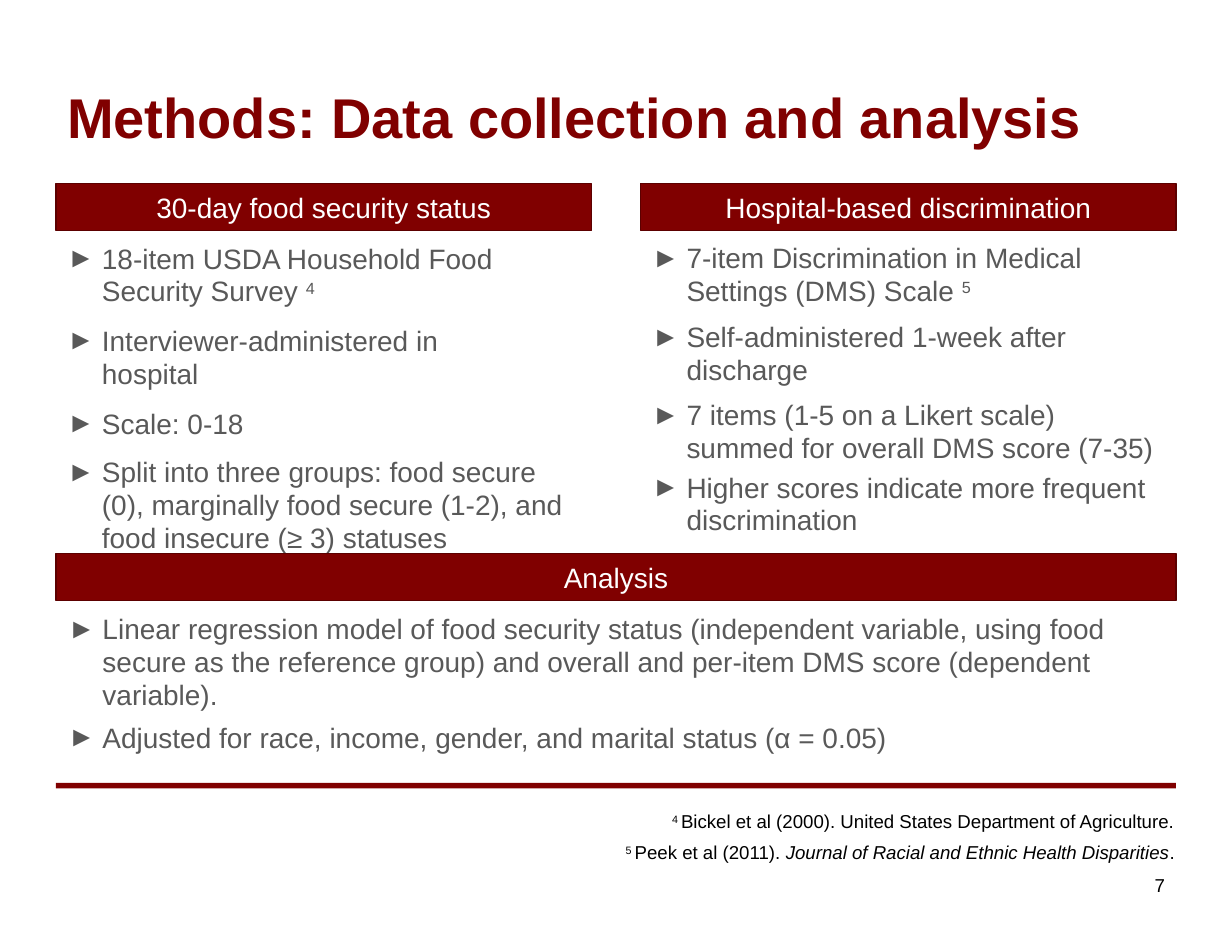
"""Build the methods slide on data collection and analysis."""
from dataclasses import dataclass

from lxml.etree import SubElement
from pptx import Presentation
from pptx.dml.color import RGBColor
from pptx.enum.shapes import MSO_SHAPE
from pptx.enum.text import MSO_ANCHOR, MSO_AUTO_SIZE, PP_ALIGN
from pptx.oxml.ns import qn
from pptx.util import Inches, Pt


@dataclass(frozen=True)
class Theme:
    font: str = "Arial"
    maroon: RGBColor = RGBColor(0x80, 0x00, 0x00)
    edge: RGBColor = RGBColor(0x5C, 0x00, 0x00)
    grey: RGBColor = RGBColor(0x59, 0x59, 0x59)
    white: RGBColor = RGBColor(0xFF, 0xFF, 0xFF)
    black: RGBColor = RGBColor(0x00, 0x00, 0x00)
    title: int = 36
    body: int = 18
    note: int = 12


theme = Theme()
deck = Presentation()
deck.slide_width, deck.slide_height = Inches(11), Inches(8.5)
slide = deck.slides.add_slide(deck.slide_layouts[1])
shapes = slide.shapes
col, row = deck.slide_width / 22, deck.slide_height / 17


def grid(left, top, width, height):
    return [round(n) for n in (left * col, top * row, width * col, height * row)]


def write(shape, paras, size, color, inset=0.0, align=PP_ALIGN.LEFT,
          anchor=MSO_ANCHOR.TOP, bold=False, bullet=False):
    frame = shape.text_frame
    frame.word_wrap, frame.auto_size = True, MSO_AUTO_SIZE.NONE
    frame.vertical_anchor = anchor
    frame.margin_left = frame.margin_right = frame.margin_bottom = 0
    frame.margin_top = Inches(inset)
    for i, (gap, line, right, runs) in enumerate(paras):
        para = frame.add_paragraph() if i else frame.paragraphs[0]
        if bullet:
            props = para._p.get_or_add_pPr()
            props.set("marL", str(Inches(0.35)))
            props.set("indent", str(-Inches(0.31)))
            props.set("marR", str(Inches(right)))
            SubElement(props, qn("a:buFont")).set("typeface", theme.font)
            SubElement(props, qn("a:buChar")).set("char", "►")
        para.alignment = align
        para.space_before, para.space_after = Pt(gap), Pt(0)
        para.line_spacing = line
        for text, style in runs:
            run = para.add_run()
            run.text = text
            font = run.font
            font.name, font.size, font.bold = theme.font, Pt(size), bold
            font.color.rgb = color
            if style == "italic":
                font.italic = True
            elif style == "super":
                font._element.set("baseline", "28000")


title, body = shapes.title, slide.placeholders[1]
title.left, title.top, title.width, title.height = grid(1.2, 0.46, 19.54, 2.28)
write(title, [(0, 1.0, 0, [("Methods: Data collection and analysis", "")])],
      theme.title, theme.maroon, 0.48, anchor=MSO_ANCHOR.MIDDLE, bold=True)

body.left, body.top, body.width, body.height = grid(1.12, 4.26, 9.02, 5.1)
write(body, [
    (0, Pt(21.1), 0, [("18-item USDA Household Food Security Survey ", ""), ("4", "super")]),
    (10.2, 1.0, 0.5, [("Interviewer-administered in hospital", "")]),
    (10.1, 1.0, 0, [("Scale: 0-18", "")]),
    (10.2, 0.99, 0, [("Split into three groups: food secure (0), marginally food "
                      "secure (1-2), and food insecure (≥ 3) statuses", "")]),
], theme.body, theme.grey, 0.03, bullet=True)

scale = shapes.add_textbox(*grid(11.56, 4.26, 9.12, 5.34))
write(scale, [
    (0, Pt(20.9), 0, [("7-item Discrimination in Medical Settings (DMS) Scale ", ""),
                      ("5", "super")]),
    (9.1, Pt(20.9), 0, [("Self-administered 1-week after discharge", "")]),
    (8.2, Pt(21.1), 0, [("7 items (1-5 on a Likert scale) summed for overall "
                         "DMS score (7-35)", "")]),
    (4.5, Pt(20.9), 0, [("Higher scores indicate more frequent discrimination", "")]),
], theme.body, theme.grey, 0.03, bullet=True)

model = shapes.add_textbox(*grid(1.13, 10.9, 18.61, 2.58))
write(model, [
    (0, 0.99, 0, [("Linear regression model of food security status (independent "
                   "variable, using food secure as the reference group) and overall "
                   "and per-item DMS score (dependent variable).", "")]),
    (5, 1.0, 0, [("Adjusted for race, income, gender, and marital status "
                  "(α = 0.05)", "")]),
], theme.body, theme.grey, 0.02, bullet=True)

for label, left, top, width in (
    ("30-day food security status", 1, 3.28, 9.56),
    ("Hospital-based discrimination", 11.44, 3.28, 9.56),
    ("Analysis", 1, 9.88, 20),
):
    band = shapes.add_shape(MSO_SHAPE.RECTANGLE, *grid(left, top, width, 0.84))
    band.shadow.inherit = False
    band.fill.solid()
    band.fill.fore_color.rgb = theme.maroon
    band.line.color.rgb, band.line.width = theme.edge, Pt(1)
    write(band, [(0, 1.0, 0, [(label, "")])], theme.body, theme.white, 0.06,
          align=PP_ALIGN.CENTER)

rule = shapes.add_shape(MSO_SHAPE.RECTANGLE, *grid(1, 13.98, 20, 0.1))
rule.shadow.inherit = False
rule.fill.solid()
rule.fill.fore_color.rgb = theme.maroon
rule.line.fill.background()

notes = shapes.add_textbox(*grid(11.08, 14.28, 9.9, 1.16))
write(notes, [
    (0, 1.0, 0, [("4 ", "super"),
                 ("Bickel et al (2000). United States Department of Agriculture.", "")]),
    (5.5, 1.0, 0, [("5 ", "super"), ("Peek et al (2011). ", ""),
                   ("Journal of Racial and Ethnic Health Disparities", "italic"),
                   (".", "")]),
], theme.note, theme.black, 0.09, align=PP_ALIGN.RIGHT)

page = shapes.add_textbox(*grid(20.62, 15.58, 0.5, 0.44))
write(page, [(0, 1.0, 0, [("7", "")])], theme.note, theme.black, 0.01)

deck.save("out.pptx")
